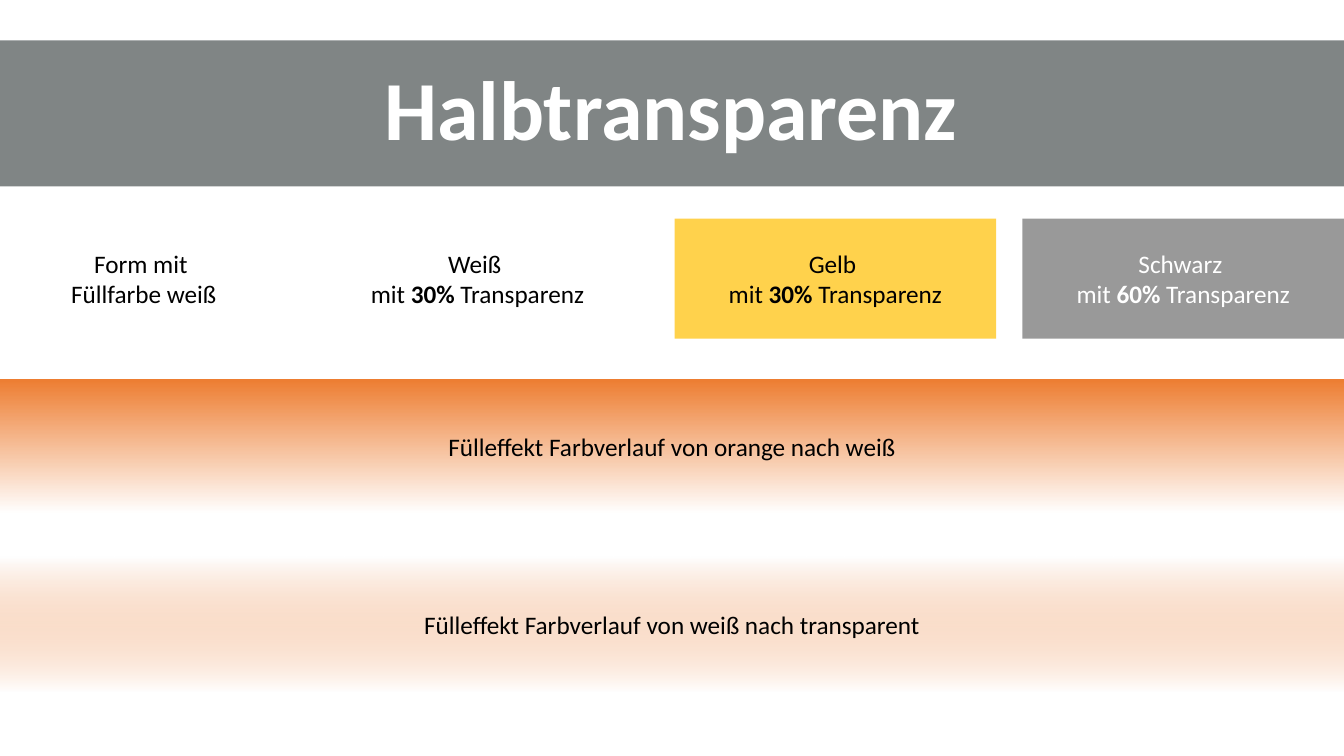
import pptx
import pptx.util
import pptx.dml.color
import pptx.enum.shapes
import pptx.enum.text
import pptx.oxml.ns
from lxml import etree

Inches = pptx.util.Inches


def color(code):
    return pptx.dml.color.RGBColor.from_string(code)


class Page:
    font = "Calibri"
    size = 18

    def __init__(self, deck):
        self.slide = deck.slides.add_slide(deck.slide_layouts[5])

    def place(self, shape, left, top, width, height):
        shape.left, shape.top = Inches(left), Inches(top)
        shape.width, shape.height = Inches(width), Inches(height)

    def alpha(self, shape, value):
        """Set the opacity in percent of the last fill colour."""
        tag = pptx.oxml.ns.qn("a:srgbClr")
        last = list(shape._element.spPr.iter(tag))[-1]
        etree.SubElement(last, pptx.oxml.ns.qn("a:alpha"), val=str(value * 1000))

    def paint(self, shape, code, alpha=100):
        shape.fill.solid()
        shape.fill.fore_color.rgb = color(code)
        if alpha < 100:
            self.alpha(shape, alpha)

    def label(self, shape, lines, ink, size=None):
        """Set centred lines; parts between asterisks are bold."""
        frame = shape.text_frame
        frame.word_wrap = True
        frame.vertical_anchor = pptx.enum.text.MSO_ANCHOR.MIDDLE
        frame.text = "\n".join(lines)
        for para, line in zip(frame.paragraphs, lines):
            para.alignment = pptx.enum.text.PP_ALIGN.CENTER
            para.text = ""
            for i, part in enumerate(line.split("*")):
                if part:
                    run = para.add_run()
                    run.text = part
                    run.font.name = self.font
                    run.font.size = pptx.util.Pt(size or self.size)
                    run.font.bold = i % 2 == 1
                    run.font.color.rgb = color(ink)

    def title(self, text, box, code, alpha):
        shape = self.slide.shapes.title
        self.place(shape, *box)
        self.paint(shape, code, alpha)
        self.label(shape, [f"*{text}*"], "FFFFFF", 60)
        shape.text_frame.auto_size = pptx.enum.text.MSO_AUTO_SIZE.NONE
        shape.text_frame.paragraphs[0].line_spacing = 0.9

    def rect(self, box, lines, ink="000000"):
        kind = pptx.enum.shapes.MSO_SHAPE.RECTANGLE
        shape = self.slide.shapes.add_shape(kind, *map(Inches, box))
        shape.shadow.inherit = False
        shape.line.fill.background()
        self.label(shape, lines, ink)
        return shape

    def tile(self, box, lines, code, alpha, ink):
        self.paint(self.rect(box, lines, ink), code, alpha)

    def band(self, top, text, start, end, alpha=100):
        shape = self.rect((0, top, 13.33, 1.34), [text])
        shape.fill.gradient()
        shape.fill.gradient_angle = 270
        for stop, code, pos in zip(shape.fill.gradient_stops, (start, end), (0, 1)):
            stop.color.rgb = color(code)
            stop.position = pos
        if alpha < 100:
            self.alpha(shape, alpha)


def main():
    deck = pptx.Presentation()
    deck.slide_width, deck.slide_height = Inches(13.33), Inches(7.5)
    page = Page(deck)

    # Title bar
    page.title("Halbtransparenz", (-0.03, 0.4, 13.37, 1.45), "030C0D", 50)

    # Row of solid fills
    share = "mit *{}%* Transparenz"
    tiles = [
        (-0.03, 2.91, ["Form mit ", "Füllfarbe weiß"], "FFFFFF", 100, "000000"),
        (3.14, 3.19, ["Weiß ", share.format(30)], "FFFFFF", 70, "000000"),
        (6.69, 3.19, ["Gelb ", share.format(30)], "FFC000", 70, "000000"),
        (10.14, 3.19, ["Schwarz ", share.format(60)], "000000", 40, "FFFFFF"),
    ]
    for left, width, lines, code, alpha, ink in tiles:
        page.tile((left, 2.17, width, 1.19), lines, code, alpha, ink)

    # Gradient bands
    white, orange = "FFFFFF", "ED7D31"
    page.band(3.76, "Fülleffekt Farbverlauf von orange nach weiß", orange, white)
    page.band(5.52, "Fülleffekt Farbverlauf von weiß nach transparent", white, orange, 0)

    deck.save("out.pptx")


if __name__ == "__main__":
    main()
